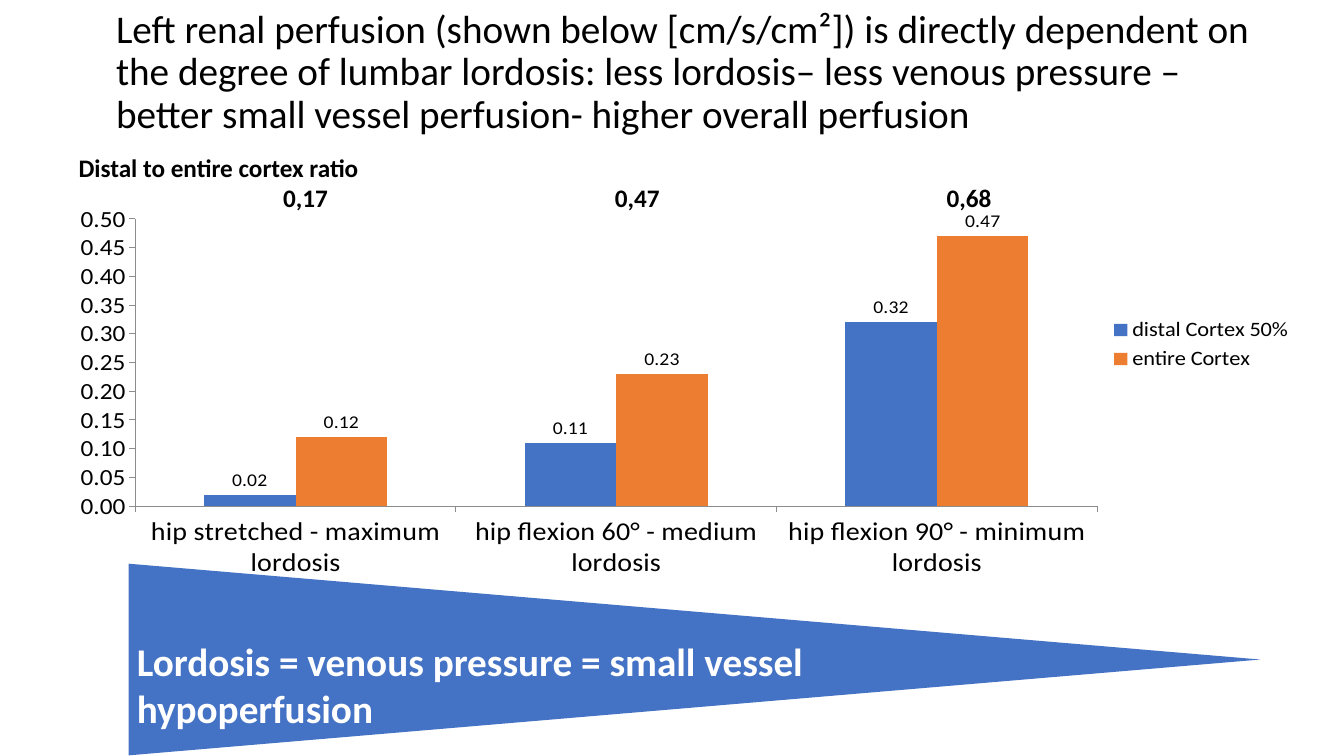
import pptx
import pptx.chart.data
import pptx.dml.color
import pptx.enum.chart
import pptx.enum.shapes
import pptx.enum.text
import pptx.oxml
import pptx.oxml.ns
import pptx.util
from pptx.util import Cm

TITLE = (
    "Left renal perfusion (shown below [cm/s/cm²]) is directly dependent on "
    "the degree of lumbar lordosis: less lordosis– less venous pressure – "
    "better small vessel perfusion- higher overall perfusion"
)
RATIO_HEADING = "Distal to entire cortex ratio"
RATIOS = ["0,17", "0,47", "0,68"]
POSITIONS = [
    "hip stretched - maximum lordosis",
    "hip flexion 60° - medium lordosis",
    "hip flexion 90° - minimum lordosis",
]
PERFUSION = [
    ("distal Cortex 50%", "blue", (0.02, 0.11, 0.32)),
    ("entire Cortex", "orange", (0.12, 0.23, 0.47)),
]
WEDGE_LABEL = "Lordosis = venous pressure = small vessel hypoperfusion"

COLORS = {"black": "000000", "white": "FFFFFF", "blue": "4472C4",
          "orange": "ED7D31", "axis": "8C8C8C"}
FONT = "Calibri"
PLOT_AREA = {"x": 0.054, "y": 0.182, "w": 0.779, "h": 0.728}
FIRST_TAB, TAB_STEP = 5.72, 8.36  # centimetres
WEDGE_CENTER = (17.5, 16.62)
WEDGE_BASE, WEDGE_LENGTH = 4.83, 28.52


def color(name):
    return pptx.dml.color.RGBColor.from_string(COLORS[name])


def format_font(font, size, ink="black", bold=False):
    font.name = FONT
    font.size = pptx.util.Pt(size)
    font.bold = bold
    font.color.rgb = color(ink)


def write(para, text, **style):
    span = para.add_run()
    span.text = text
    format_font(span.font, **style)


def add_text_box(page, left, top, width, height):
    box = page.shapes.add_textbox(Cm(left), Cm(top), Cm(width), Cm(height))
    box.text_frame.word_wrap = True
    return box.text_frame


def add_center_tabs(para, stops):
    """Centre text under evenly spaced stops given in centimetres."""
    properties = para._p.get_or_add_pPr()
    tabs = pptx.oxml.parse_xml(f"<a:tabLst {pptx.oxml.ns.nsdecls('a')}/>")
    for stop in stops:
        tab = pptx.oxml.parse_xml(f"<a:tab {pptx.oxml.ns.nsdecls('a')}/>")
        tab.set("pos", str(int(Cm(stop))))
        tab.set("algn", "ctr")
        tabs.append(tab)
    properties.append(tabs)


def set_plot_area(chart):
    """Fix the inner plot area as fractions of the chart."""
    sizes = "".join(f'<c:{key} val="{value}"/>' for key, value in PLOT_AREA.items())
    layout = pptx.oxml.parse_xml(
        f"<c:layout {pptx.oxml.ns.nsdecls('c')}><c:manualLayout>"
        '<c:layoutTarget val="inner"/><c:xMode val="edge"/><c:yMode val="edge"/>'
        f"{sizes}</c:manualLayout></c:layout>")
    plot_area = chart._chartSpace.chart.plotArea
    for old in plot_area.findall(pptx.oxml.ns.qn("c:layout")):
        plot_area.remove(old)
    plot_area.insert(0, layout)


def add_perfusion_chart(page):
    data = pptx.chart.data.CategoryChartData(number_format="0.00")
    data.categories = POSITIONS
    for name, _, values in PERFUSION:
        data.add_series(name, values)
    chart = page.shapes.add_chart(
        pptx.enum.chart.XL_CHART_TYPE.COLUMN_CLUSTERED,
        Cm(1.73), Cm(3.71), Cm(31.12), Cm(10.87), data).chart
    format_font(chart.font, 10)
    chart.has_title = False
    chart.has_legend = True
    chart.legend.position = pptx.enum.chart.XL_LEGEND_POSITION.RIGHT
    chart.legend.include_in_layout = False
    format_font(chart.legend.font, 16)
    set_plot_area(chart)

    for axis, size in ((chart.category_axis, 20), (chart.value_axis, 18)):
        axis.has_major_gridlines = False
        axis.major_tick_mark = pptx.enum.chart.XL_TICK_MARK.OUTSIDE
        axis.format.line.color.rgb = color("axis")
        format_font(axis.tick_labels.font, size)
    scale = chart.value_axis
    scale.minimum_scale, scale.maximum_scale, scale.major_unit = 0, 0.5, 0.05
    scale.tick_labels.number_format = "0.00"
    scale.tick_labels.number_format_is_linked = False

    plot = chart.plots[0]
    plot.gap_width, plot.overlap, plot.vary_by_categories = 150, 0, False
    for series, (_, fill, _) in zip(plot.series, PERFUSION):
        series.format.fill.solid()
        series.format.fill.fore_color.rgb = color(fill)
        labels = series.data_labels
        labels.show_value = True
        labels.number_format = "0.00"
        labels.number_format_is_linked = False
        labels.position = pptx.enum.chart.XL_LABEL_POSITION.OUTSIDE_END
        format_font(labels.font, 14)


def add_title(page):
    title = page.shapes.title
    title.left, title.top, title.width, title.height = Cm(2.67), Cm(0), Cm(29.21), Cm(3.68)
    frame = title.text_frame
    frame.word_wrap = True
    frame.auto_size = pptx.enum.text.MSO_AUTO_SIZE.NONE
    frame.vertical_anchor = pptx.enum.text.MSO_ANCHOR.MIDDLE
    para = frame.paragraphs[0]
    para.alignment = pptx.enum.text.PP_ALIGN.LEFT
    para.line_spacing = 0.9
    write(para, TITLE, size=28)


def add_ratios(page):
    frame = add_text_box(page, 1.73, 3.71, 30.05, 1.8)
    write(frame.paragraphs[0], RATIO_HEADING, size=18, bold=True)
    para = frame.add_paragraph()
    add_center_tabs(para, [FIRST_TAB + TAB_STEP * i for i in range(len(RATIOS))])
    write(para, "".join("\t" + ratio for ratio in RATIOS), size=18, bold=True)


def add_wedge(page):
    center_x, center_y = WEDGE_CENTER
    wedge = page.shapes.add_shape(
        pptx.enum.shapes.MSO_SHAPE.ISOSCELES_TRIANGLE,
        Cm(center_x - WEDGE_BASE / 2), Cm(center_y - WEDGE_LENGTH / 2),
        Cm(WEDGE_BASE), Cm(WEDGE_LENGTH))
    wedge.rotation = 90
    wedge.shadow.inherit = False
    wedge.fill.solid()
    wedge.fill.fore_color.rgb = color("blue")
    wedge.line.fill.background()
    label = add_text_box(page, 3.2, 15.93, 22.71, 1.45)
    write(label.paragraphs[0], WEDGE_LABEL, size=28, ink="white", bold=True)


def main():
    deck = pptx.Presentation()
    deck.slide_width, deck.slide_height = Cm(33.87), Cm(19.05)
    page = deck.slides.add_slide(deck.slide_layouts[5])
    add_title(page)
    add_perfusion_chart(page)
    add_ratios(page)
    add_wedge(page)
    deck.save("out.pptx")


if __name__ == "__main__":
    main()
